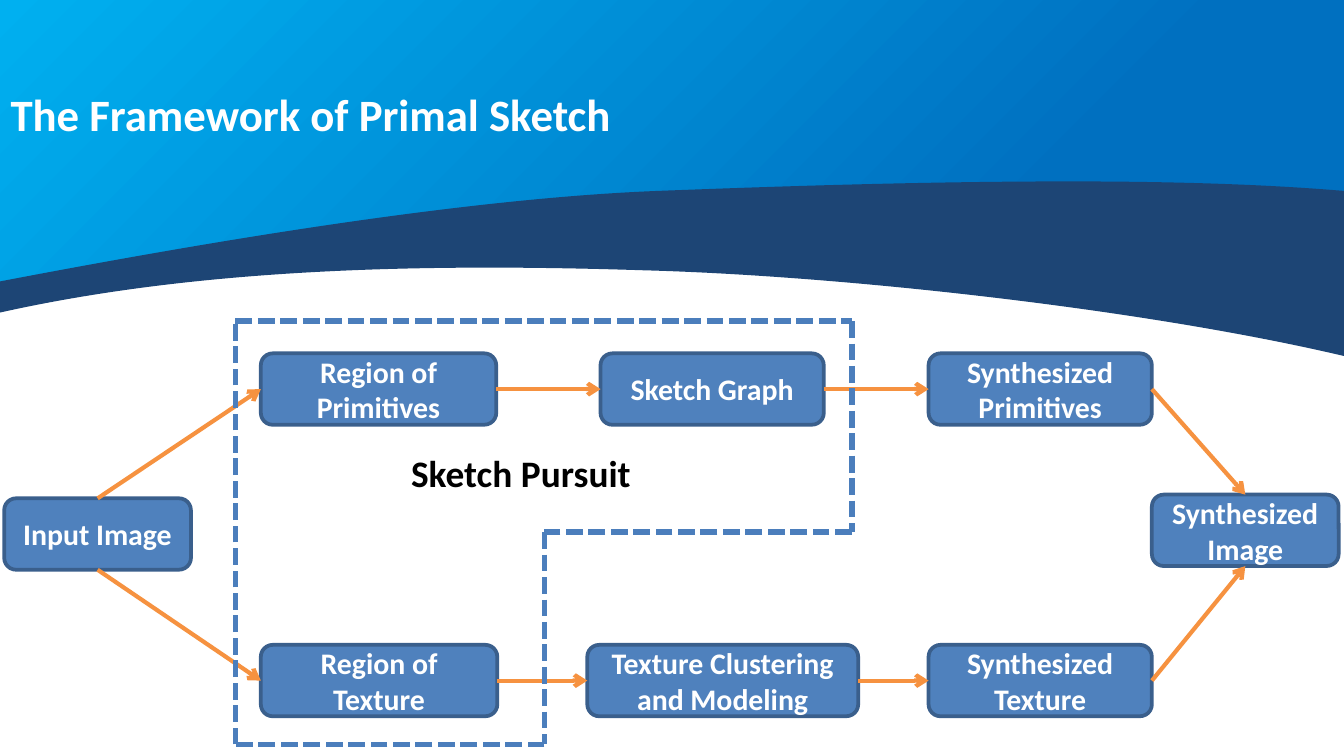
from dataclasses import dataclass

from lxml import etree
from pptx import Presentation
from pptx.dml.color import RGBColor
from pptx.enum.dml import MSO_LINE
from pptx.enum.shapes import MSO_CONNECTOR, MSO_SHAPE
from pptx.enum.text import MSO_ANCHOR, MSO_AUTO_SIZE, PP_ALIGN
from pptx.oxml.ns import qn
from pptx.util import Cm, Pt

STRAIGHT = MSO_CONNECTOR.STRAIGHT
ROUNDED = MSO_SHAPE.ROUNDED_RECTANGLE
DOTTED = MSO_LINE.SQUARE_DOT
MIDDLE = MSO_ANCHOR.MIDDLE
CENTER = PP_ALIGN.CENTER
GROW = MSO_AUTO_SIZE.SHAPE_TO_FIT_TEXT

SKY = RGBColor(0x00, 0xB0, 0xF0)
BLUE = RGBColor(0x00, 0x70, 0xC0)
NAVY = RGBColor(0x1D, 0x45, 0x75)
BOX_FILL = RGBColor(0x4F, 0x81, 0xBD)
BOX_LINE = RGBColor(0x3A, 0x5F, 0x8C)
ORANGE = RGBColor(0xF6, 0x92, 0x40)
OUTLINE = RGBColor(0x4B, 0x7E, 0xBC)
WHITE = RGBColor(0xFF, 0xFF, 0xFF)
BLACK = RGBColor(0x00, 0x00, 0x00)

FONT = "Calibri"
BOX_HEIGHT = 1.35
TOP_ROW, BOTTOM_ROW = 6.68, 12.19
TOP, LEFT, BOTTOM, RIGHT = range(4)  # connection sites of a box

Point = tuple[float, float]


@dataclass(frozen=True)
class Box:
    text: str
    left: float
    top: float
    width: float


@dataclass(frozen=True)
class Arrow:
    start: str
    start_site: int
    end: str
    end_site: int


BOXES = [
    Box("Input Image", 0.08, 9.42, 3.53),
    Box("Region of Primitives", 4.93, TOP_ROW, 4.45),
    Box("Region of Texture", 4.93, BOTTOM_ROW, 4.47),
    Box("Sketch Graph", 11.35, TOP_ROW, 4.22),
    Box("Texture Clustering and Modeling", 11.1, BOTTOM_ROW, 5.12),
    Box("Synthesized Primitives", 17.55, TOP_ROW, 4.22),
    Box("Synthesized Texture", 17.55, BOTTOM_ROW, 4.22),
    Box("Synthesized Image", 21.77, 9.35, 3.53),
]

ARROWS = [
    Arrow("Input Image", TOP, "Region of Primitives", LEFT),
    Arrow("Input Image", BOTTOM, "Region of Texture", LEFT),
    Arrow("Region of Primitives", RIGHT, "Sketch Graph", LEFT),
    Arrow("Region of Texture", RIGHT, "Texture Clustering and Modeling", LEFT),
    Arrow("Sketch Graph", RIGHT, "Synthesized Primitives", LEFT),
    Arrow("Texture Clustering and Modeling", RIGHT, "Synthesized Texture", LEFT),
    Arrow("Synthesized Primitives", RIGHT, "Synthesized Image", TOP),
    Arrow("Synthesized Texture", RIGHT, "Synthesized Image", BOTTOM),
]

PURSUIT_CORNERS = [(4.45, 6.07), (16.1, 6.07), (16.1, 10.06),
                   (10.29, 10.06), (10.29, 14.07), (4.45, 14.07)]

# One point is a straight segment, three points are a Bezier curve.
HEADER = [
    [(25.4, 0)],
    [(25.4, 3.66)],
    [(23.9, 3.51), (22.1, 3.48), (20.24, 3.48)],
    [(17.45, 3.48), (14.55, 3.58), (12.45, 3.66)],
    [(8.69, 3.78), (3.71, 4.67), (0, 5.36)],
]
WAVE = [
    [(17.4, 3.43), (14.5, 3.53), (12.42, 3.61)],
    [(8.64, 3.76), (3.66, 4.62), (-0.05, 5.33)],
    [(-0.05, 5.92)],
    [(3.81, 5.05), (8.15, 4.98), (12.17, 5.11)],
    [(15.9, 5.21), (21.62, 5.84), (25.4, 6.73)],
    [(25.4, 3.61)],
    [(23.88, 3.48), (22.07, 3.43), (20.22, 3.43)],
]


def add_curved_shape(slide, start: Point, segments: list[list[Point]]):
    """Build a closed freeform, merging each triple of points into a curve."""
    builder = slide.shapes.build_freeform(Cm(start[0]), Cm(start[1]))
    points = [(Cm(x), Cm(y)) for segment in segments for x, y in segment]
    builder.add_line_segments(points, close=True)
    sp = builder.convert_to_shape()
    lines = iter(list(sp._element.iter(qn("a:lnTo"))))
    for segment in segments:
        parts = [next(lines) for _ in segment]
        if len(parts) == 3:
            curve = etree.Element(qn("a:cubicBezTo"))
            parts[0].addprevious(curve)
            for part in parts:
                curve.append(part[0])
                part.getparent().remove(part)
    sp.line.fill.background()
    sp.shadow.inherit = False
    return sp


def add_run(p, text: str, size: int, color: RGBColor) -> None:
    r = p.add_run()
    r.text = text
    r.font.name = FONT
    r.font.size = Pt(size)
    r.font.bold = True
    r.font.color.rgb = color


def add_label(slide, box: Box, height: float, size: int, color: RGBColor):
    sp = slide.shapes.add_textbox(Cm(box.left), Cm(box.top), Cm(box.width), Cm(height))
    tf = sp.text_frame
    tf.word_wrap = True
    tf.auto_size = GROW
    p = tf.paragraphs[0]
    add_run(p, box.text, size, color)
    return p


def add_box(slide, box: Box):
    sp = slide.shapes.add_shape(
        ROUNDED, Cm(box.left), Cm(box.top), Cm(box.width), Cm(BOX_HEIGHT))
    sp.shadow.inherit = False
    sp.fill.solid()
    sp.fill.fore_color.rgb = BOX_FILL
    sp.line.color.rgb = BOX_LINE
    sp.line.width = Pt(2)
    tf = sp.text_frame
    tf.word_wrap = True
    tf.vertical_anchor = MIDDLE
    p = tf.paragraphs[0]
    p.alignment = CENTER
    add_run(p, box.text, 16, WHITE)
    return sp


def add_line(slide, start: Point, end: Point, color: RGBColor, width: float):
    line = slide.shapes.add_connector(
        STRAIGHT, Cm(start[0]), Cm(start[1]), Cm(end[0]), Cm(end[1]))
    line.line.color.rgb = color
    line.line.width = Pt(width)
    etree.SubElement(line._element.spPr, qn("a:effectLst"))
    return line


def add_arrow(slide, arrow: Arrow, shapes: dict) -> None:
    line = add_line(slide, (0, 0), (1, 1), ORANGE, 2.25)
    line.begin_connect(shapes[arrow.start], arrow.start_site)
    line.end_connect(shapes[arrow.end], arrow.end_site)
    etree.SubElement(line.line._get_or_add_ln(), qn("a:tailEnd"), type="arrow")


def main() -> None:
    prs = Presentation()
    prs.slide_width, prs.slide_height = Cm(25.4), Cm(14.29)
    slide = prs.slides.add_slide(prs.slide_layouts[6])

    header = add_curved_shape(slide, (0, 0), HEADER)
    header.fill.gradient()
    header.fill.gradient_angle = 315
    for stop, color, position in zip(header.fill.gradient_stops, (SKY, BLUE), (0, 0.76)):
        stop.color.rgb = color
        stop.position = position

    wave = add_curved_shape(slide, (20.22, 3.43), WAVE)
    wave.fill.solid()
    wave.fill.fore_color.rgb = NAVY

    title = Box("The Framework of Primal Sketch", -0.05, 0, 15.98)
    add_label(slide, title, 2.82, 24, WHITE).line_spacing = 2.5
    add_label(slide, Box("Sketch Pursuit", 7.52, 8.38, 5.05), 1.12, 20, BLACK)

    shapes = {box.text: add_box(slide, box) for box in BOXES}
    for arrow in ARROWS:
        add_arrow(slide, arrow, shapes)

    next_corners = PURSUIT_CORNERS[1:] + PURSUIT_CORNERS[:1]
    for start, end in zip(PURSUIT_CORNERS, next_corners):
        add_line(slide, start, end, OUTLINE, 3).line.dash_style = DOTTED

    prs.save("out.pptx")


if __name__ == "__main__":
    main()
